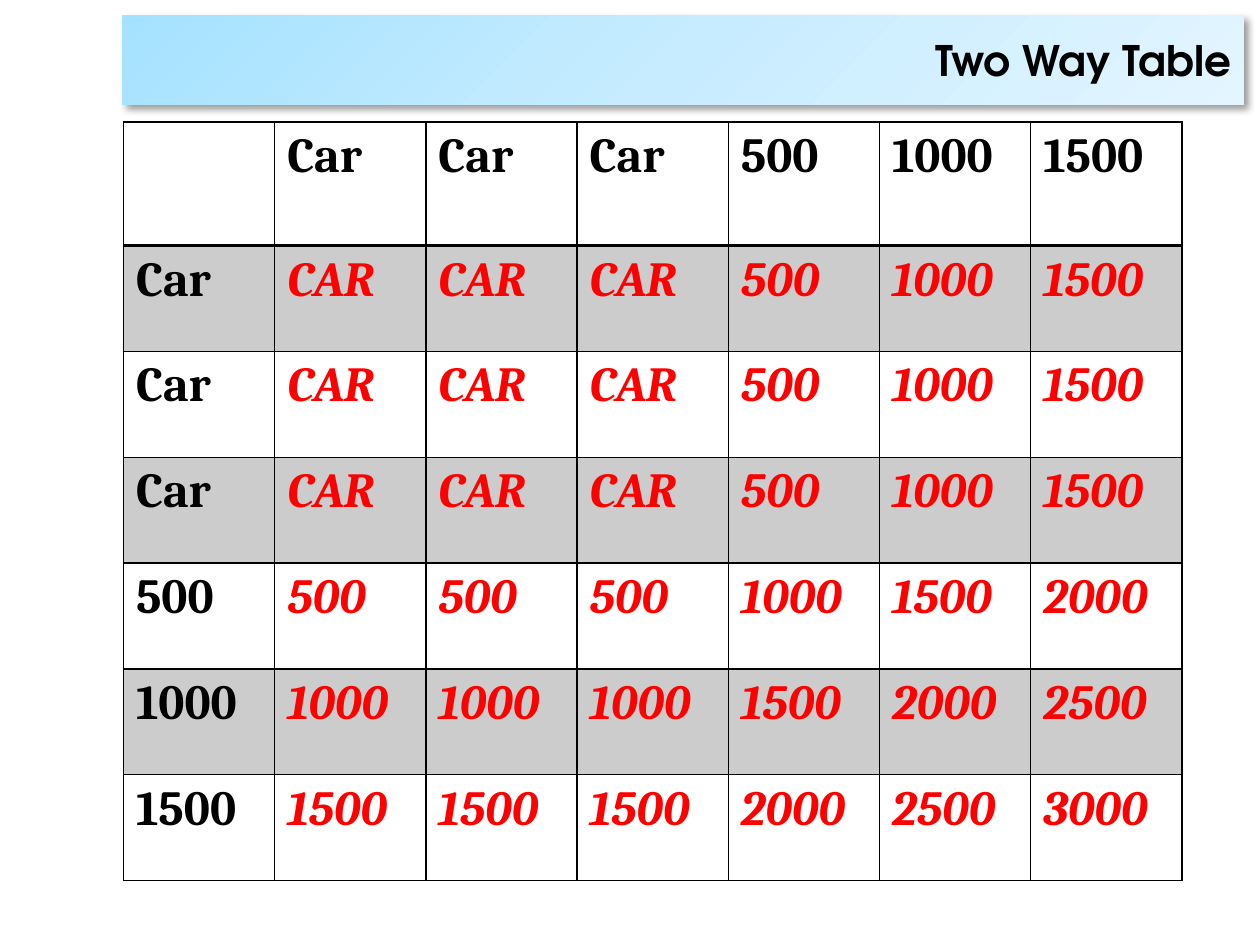
from lxml import etree
from pptx import Presentation
from pptx.dml.color import RGBColor as RGB
from pptx.enum.shapes import MSO_SHAPE as SHAPE
from pptx.enum.text import MSO_ANCHOR as ANCHOR, PP_ALIGN as ALIGN
from pptx.oxml import parse_xml
from pptx.util import Inches, Pt

COLORS = {"black": "000000", "red": "FF0000", "sky": "A5E2FF",
          "pale": "C7ECFF", "mist": "E3F5FF"}
NS = 'xmlns:a="http://schemas.openxmlformats.org/drawingml/2006/main"'


def write(tf, text, font="Cambria", size=28, color="black", italic=False, align=None):
    p = tf.paragraphs[0]
    p.alignment = align
    r = p.add_run()
    r.text = text
    r.font.name, r.font.size = font, Pt(size)
    r.font.bold, r.font.italic = True, italic
    r.font.color.rgb = RGB.from_string(COLORS[color])


def add_border(tc_pr, side, width):
    tc_pr.append(parse_xml(
        f'<a:ln{side} {NS} w="{Pt(width)}"><a:solidFill>'
        f'<a:srgbClr val="{COLORS["black"]}"/></a:solidFill></a:ln{side}>'))


prs = Presentation()
prs.slide_width, prs.slide_height = Inches(10), Inches(7.5)
W, H = prs.slide_width, prs.slide_height
s = prs.slides.add_slide(prs.slide_layouts[6])

# Title bar with gradient and soft shadow
sp = s.shapes.add_shape(SHAPE.RECTANGLE, Inches(0.97), Inches(0.12),
                        int(W * 0.89), Inches(0.71))
sp.line.fill.background()
sp.fill.background()
stops = "".join(f'<a:gs pos="{pos * 1000}"><a:srgbClr val="{COLORS[name]}"/></a:gs>'
                for pos, name in ((0, "sky"), (50, "pale"), (100, "mist")))
sp_pr = sp._element.spPr
sp_pr.replace(sp_pr.find("{*}noFill"), parse_xml(
    f'<a:gradFill {NS} rotWithShape="1"><a:gsLst>{stops}</a:gsLst>'
    '<a:lin ang="2700000" scaled="0"/></a:gradFill>'))
sp_pr.append(parse_xml(
    f'<a:effectLst {NS}><a:outerShdw blurRad="{Pt(4)}" dist="{Pt(3)}" dir="2700000" '
    f'algn="tl" rotWithShape="0"><a:srgbClr val="{COLORS["black"]}">'
    '<a:alpha val="40000"/></a:srgbClr></a:outerShdw></a:effectLst>'))
sp.text_frame.word_wrap = True
sp.text_frame.vertical_anchor = ANCHOR.MIDDLE
write(sp.text_frame, "Two Way Table", font="TeX Gyre Adventor", size=24, align=ALIGN.RIGHT)

# Two-way table: each inner cell combines its row and column prize
prizes = ["Car", "Car", "Car", "500", "1000", "1500"]
n = len(prizes) + 1
head_h, row_h = Inches(0.98), Inches(0.84)
table = s.shapes.add_table(n, n, Inches(0.98), Inches(0.97), int(W * 0.84),
                           head_h + row_h * (n - 1)).table
table.first_row = table.horz_banding = False
for col in table.columns:
    col.width = int(W * 0.84 / n)
for i, row in enumerate(table.rows):
    row.height = row_h if i else head_h

for i, row_prize in enumerate([""] + prizes):
    for j, col_prize in enumerate([""] + prizes):
        cell = table.cell(i, j)
        tc_pr = cell._tc.get_or_add_tcPr()

        # Borders, heavier under the header row
        for side in "LRTB":
            heavy = (i, side) in ((0, "B"), (1, "T"))
            add_border(tc_pr, side, 2 if heavy else 1)

        # Shade every other row
        if i % 2:
            cell.fill.solid()
            cell.fill.fore_color.rgb = RGB.from_string(COLORS["black"])
            clr = tc_pr.find("{*}solidFill")[0]
            etree.SubElement(clr, clr.tag.replace("srgbClr", "alpha"), val="20000")
        else:
            cell.fill.background()

        # Headings in black, outcomes in red italics
        if i and j:
            cash = [int(v) for v in (row_prize, col_prize) if v != "Car"]
            write(cell.text_frame, str(sum(cash)) if cash else "CAR",
                  color="red", italic=True)
        elif i or j:
            write(cell.text_frame, row_prize or col_prize)

prs.save("out.pptx")
